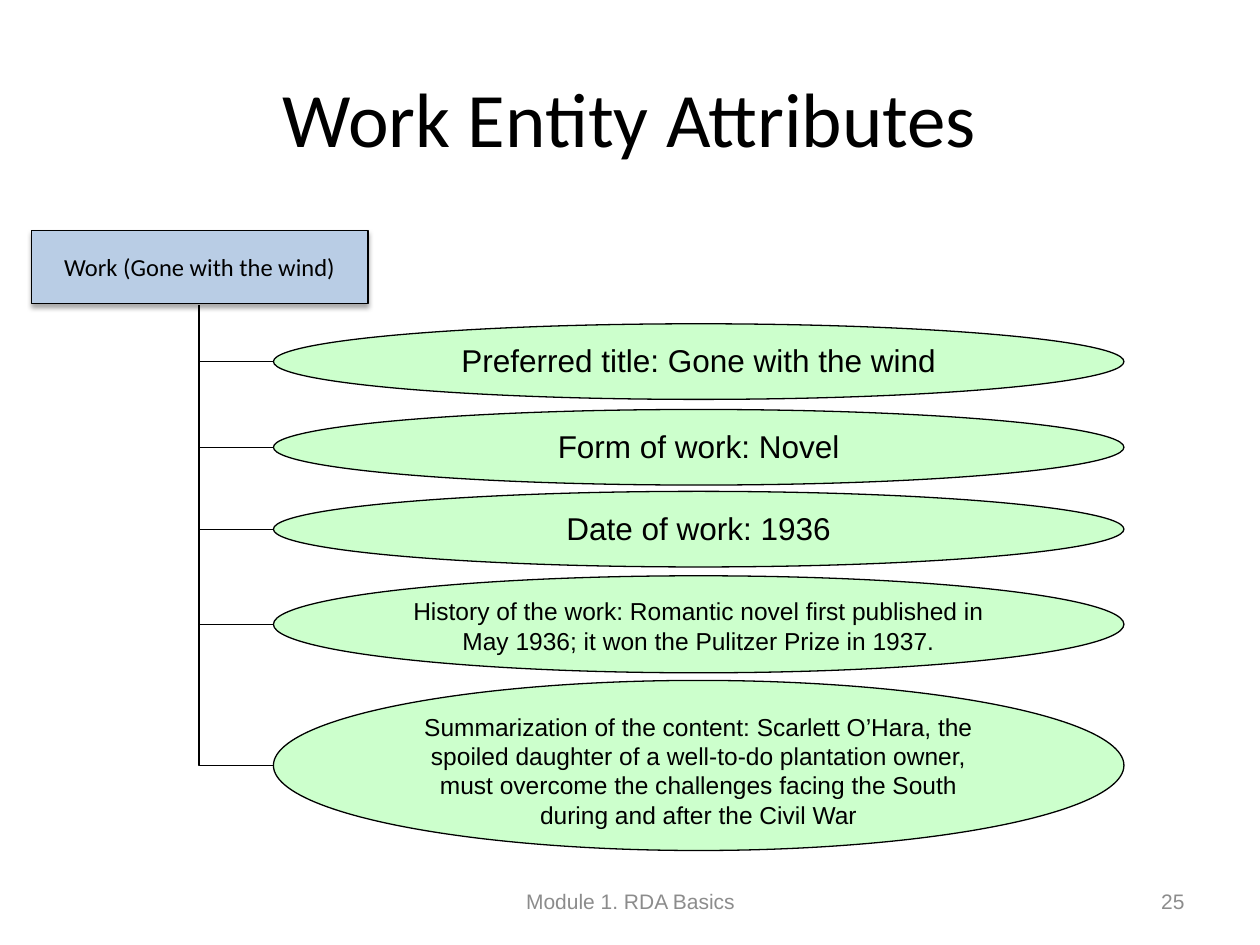
"""Build the slide on the attributes of the work entity."""
import dataclasses

import lxml.etree
import pptx
import pptx.dml.color
import pptx.enum.shapes
import pptx.enum.text
import pptx.oxml
import pptx.oxml.ns
import pptx.util

Inches = pptx.util.Inches
SHAPE = pptx.enum.shapes.MSO_SHAPE
ALIGN = pptx.enum.text.PP_ALIGN
ANCHOR = pptx.enum.text.MSO_ANCHOR
HUES = {"ink": "000000", "box": "B9CDE5", "oval": "CCFFCC", "foot": "8C8C8C"}
LEFT, WIDTH = 2.17, 6.75
TRUNK, BASE = 1.58, 2.42


@dataclasses.dataclass
class Trait:
    text: str
    top: float
    height: float = 0.6
    size: int = 18


@dataclasses.dataclass
class Foot:
    text: str
    left: float
    width: float
    align: ALIGN


TRAITS = [
    Trait("Preferred title: Gone with the wind", 2.57),
    Trait("Form of work: Novel", 3.25),
    Trait("Date of work: 1936", 3.9),
    Trait("History of the work: Romantic novel first published in May 1936; "
          "it won the Pulitzer Prize in 1937.", 4.57, 0.77, 14),
    Trait("Summarization of the content: Scarlett O’Hara, the spoiled daughter "
          "of a well-to-do plantation owner, must overcome the challenges facing "
          "the South during and after the Civil War", 5.4, 1.35, 14),
]
FEET = [
    Foot("Module 1. RDA Basics", 3.42, 3.17, ALIGN.CENTER),
    Foot("25", 7.17, 2.33, ALIGN.RIGHT),
]


def hue(name: str) -> pptx.dml.color.RGBColor:
    """Return a named colour."""
    return pptx.dml.color.RGBColor.from_string(HUES[name])


def write(shape, text: str, size: int, face: str = "Arial", tint: str = "ink",
          align=ALIGN.CENTER, anchor=ANCHOR.MIDDLE) -> None:
    """Set and format the text of a shape."""
    frame = shape.text_frame
    frame.text = text
    frame.word_wrap = True
    frame.vertical_anchor = anchor
    line = frame.paragraphs[0]
    line.alignment = align
    for run in line.runs:
        run.font.size = pptx.util.Pt(size)
        run.font.name = face
        run.font.color.rgb = hue(tint)


def add_node(slide, kind: SHAPE, fill: str, left: float, top: float,
             width: float, height: float):
    """Add a filled shape with a thin outline."""
    node = slide.shapes.add_shape(
        kind, Inches(left), Inches(top), Inches(width), Inches(height))
    node.shadow.inherit = False
    node.fill.solid()
    node.fill.fore_color.rgb = hue(fill)
    node.line.color.rgb = hue("ink")
    node.line.width = pptx.util.Pt(0.75)
    return node


def add_shade(shape) -> None:
    """Give a shape a soft shadow below it."""
    glow = shape._element.spPr.find(pptx.oxml.ns.qn("a:effectLst"))
    glow.append(pptx.oxml.parse_xml(
        f'<a:outerShdw {pptx.oxml.ns.nsdecls("a")} blurRad="{pptx.util.Pt(3.1)}" '
        f'dist="{pptx.util.Pt(1.8)}" dir="5400000" rotWithShape="0">'
        f'<a:srgbClr val="{HUES["ink"]}"><a:alpha val="35000"/></a:srgbClr>'
        '</a:outerShdw>'))


def add_branch(slide, mid: float) -> None:
    """Add a one-bend connector from an oval up to the box."""
    branch = slide.shapes.add_connector(
        pptx.enum.shapes.MSO_CONNECTOR.ELBOW,
        Inches(LEFT), Inches(mid), Inches(TRUNK), Inches(BASE))
    branch.line.color.rgb = hue("ink")
    branch.line.width = pptx.util.Pt(0.75)
    props = branch._element.spPr
    props.find(pptx.oxml.ns.qn("a:prstGeom")).set("prst", "bentConnector2")
    lxml.etree.SubElement(props, pptx.oxml.ns.qn("a:effectLst"))


def add_trait(slide, trait: Trait) -> None:
    """Add an oval and its branch."""
    add_branch(slide, trait.top + trait.height / 2)
    oval = add_node(slide, SHAPE.OVAL, "oval", LEFT, trait.top, WIDTH, trait.height)
    write(oval, trait.text, trait.size, anchor=ANCHOR.TOP)


def add_foot(slide, foot: Foot) -> None:
    """Add one footer text."""
    box = slide.shapes.add_textbox(
        Inches(foot.left), Inches(6.95), Inches(foot.width), Inches(0.4))
    write(box, foot.text, 12, tint="foot", align=foot.align)


def main() -> None:
    """Build and save the slide."""
    deck = pptx.Presentation()
    deck.slide_width, deck.slide_height = Inches(10), Inches(7.5)
    slide = deck.slides.add_slide(deck.slide_layouts[5])
    title = slide.shapes.title
    title.left, title.top = Inches(0.5), Inches(0.3)
    title.width, title.height = Inches(9), Inches(1.25)
    write(title, "Work Entity Attributes", 44, "Calibri")
    work = add_node(slide, SHAPE.FLOWCHART_PROCESS, "box", 0.25, 1.83, 2.67, 0.58)
    add_shade(work)
    write(work, "Work (Gone with the wind)", 14, "Calibri")
    for trait in TRAITS:
        add_trait(slide, trait)
    for foot in FEET:
        add_foot(slide, foot)
    deck.save("out.pptx")


if __name__ == "__main__":
    main()
